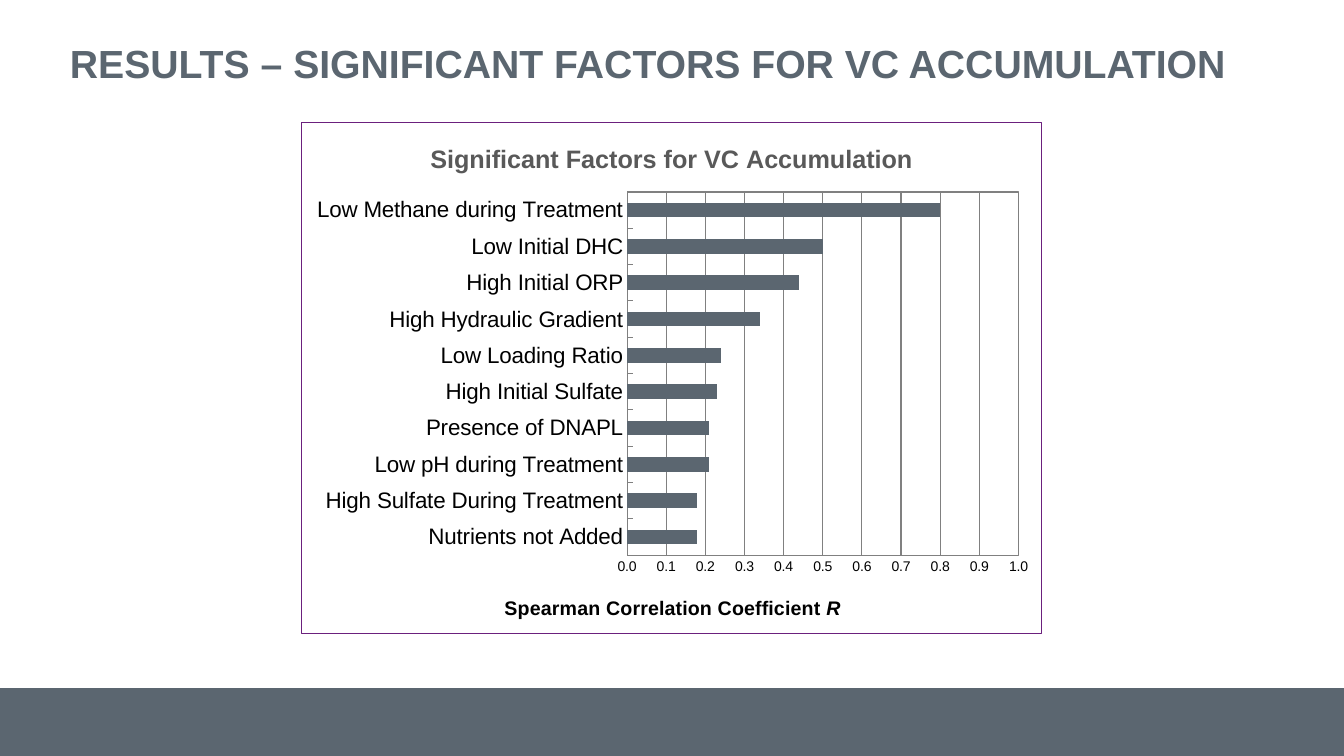
from lxml import etree
from pptx import Presentation
from pptx.chart.data import CategoryChartData
from pptx.dml.color import RGBColor
from pptx.enum.chart import XL_CHART_TYPE, XL_TICK_MARK
from pptx.enum.shapes import MSO_SHAPE
from pptx.enum.text import MSO_ANCHOR
from pptx.oxml import parse_xml
from pptx.oxml.ns import nsdecls, qn
from pptx.util import Emu, Pt

SCALE = 914400 / 100.8
SLATE, GREY, BLACK = "5B6670", "808080", "000000"
rgb = RGBColor.from_string


def px(*lengths):
    return [Emu(round(n * SCALE)) for n in lengths]


def add_text(p, text, size, color, bold=True, italic=False):
    r = p.add_run()
    r.text = text
    r.font.name, r.font.size = "Arial", Pt(size)
    r.font.bold, r.font.italic = bold, italic
    r.font.color.rgb = rgb(color)


prs = Presentation()
prs.slide_width, prs.slide_height = px(1344, 756)
s = prs.slides.add_slide(prs.slide_layouts[6])

# Footer band
band = s.shapes.add_shape(MSO_SHAPE.RECTANGLE, *px(0, 688, 1344, 68))
band.shadow.inherit = False
band.fill.solid()
band.fill.fore_color.rgb = rgb(SLATE)
band.line.fill.background()

# Slide title
tf = s.shapes.add_textbox(*px(70, 29, 1210, 73)).text_frame
tf.word_wrap = True
tf.vertical_anchor = MSO_ANCHOR.MIDDLE
tf.margin_left = 0
tf.paragraphs[0].line_spacing = 0.9
add_text(tf.paragraphs[0], "RESULTS – SIGNIFICANT FACTORS FOR VC ACCUMULATION", 28, SLATE)

# Factors, from the bottom bar to the top one
factors = {
    "Nutrients not Added": 0.18,
    "High Sulfate During Treatment": 0.18,
    "Low pH during Treatment": 0.21,
    "Presence of DNAPL": 0.21,
    "High Initial Sulfate": 0.23,
    "Low Loading Ratio": 0.24,
    "High Hydraulic Gradient": 0.34,
    "High Initial ORP": 0.44,
    "Low Initial DHC": 0.5,
    "Low Methane during Treatment": 0.8,
}
data = CategoryChartData()
data.categories = list(factors)
data.add_series("Series 1", list(factors.values()))
chart = s.shapes.add_chart(XL_CHART_TYPE.BAR_CLUSTERED, *px(301, 122, 741, 512), data).chart
chart.has_legend = False
chart.font.name, chart.font.size = "Arial", Pt(10)
chart.font.color.rgb = rgb(BLACK)

# Bars
plot = chart.plots[0]
plot.vary_by_categories = False
plot.gap_width = 150
bars = plot.series[0].format.fill
bars.solid()
bars.fore_color.rgb = rgb(SLATE)

# Axes
cat, val = chart.category_axis, chart.value_axis
cat.tick_labels.font.size = Pt(16)
val.minimum_scale, val.maximum_scale, val.major_unit = 0, 1, 0.1
val.tick_labels.number_format = "0.0"
val.tick_labels.number_format_is_linked = False
val.has_major_gridlines = True
for axis in (cat, val):
    axis.major_tick_mark = XL_TICK_MARK.INSIDE
    axis.minor_tick_mark = XL_TICK_MARK.NONE
for part in (cat, val, val.major_gridlines):
    part.format.line.color.rgb = rgb(GREY)
    part.format.line.width = Pt(0.75)

# Chart and axis titles
chart.has_title = True
p = chart.chart_title.text_frame.paragraphs[0]
add_text(p, "Significant Factors for VC Accumulation", 18, "595959")
p = val.axis_title.text_frame.paragraphs[0]
add_text(p, "Spearman Correlation Coefficient ", 14, BLACK)
add_text(p, "R", 14, BLACK, italic=True)

# Places inside the chart, as shares of its size
space = chart.element
area = next(space.iter(qn("c:plotArea")))
layouts = [
    (area, dict(x=0.44, y=0.136, w=0.529, h=0.711)),
    (val.axis_title.element if hasattr(val.axis_title, "element") else
     next(area.iter(qn("c:title"))), dict(x=0.27, y=0.92)),
]
for owner, place in layouts:
    for old in owner.findall(qn("c:layout")):
        owner.remove(old)
    layout = parse_xml(f"<c:layout {nsdecls('c')}><c:manualLayout/></c:layout>")
    settings = {"layoutTarget": "inner"} if owner is area else {}
    settings.update(xMode="edge", yMode="edge", **place)
    for name, value in settings.items():
        etree.SubElement(layout[0], qn(f"c:{name}")).set("val", str(value))
    owner.insert(0 if owner is area else 1, layout)

# Plot outline and chart border
for color, add in ((GREY, area.append), ("6B207D", space.find(qn("c:chart")).addnext)):
    add(parse_xml(
        f'<c:spPr {nsdecls("c", "a")}><a:noFill/><a:ln w="9525"><a:solidFill>'
        f'<a:srgbClr val="{color}"/></a:solidFill></a:ln></c:spPr>'))

prs.save("out.pptx")
